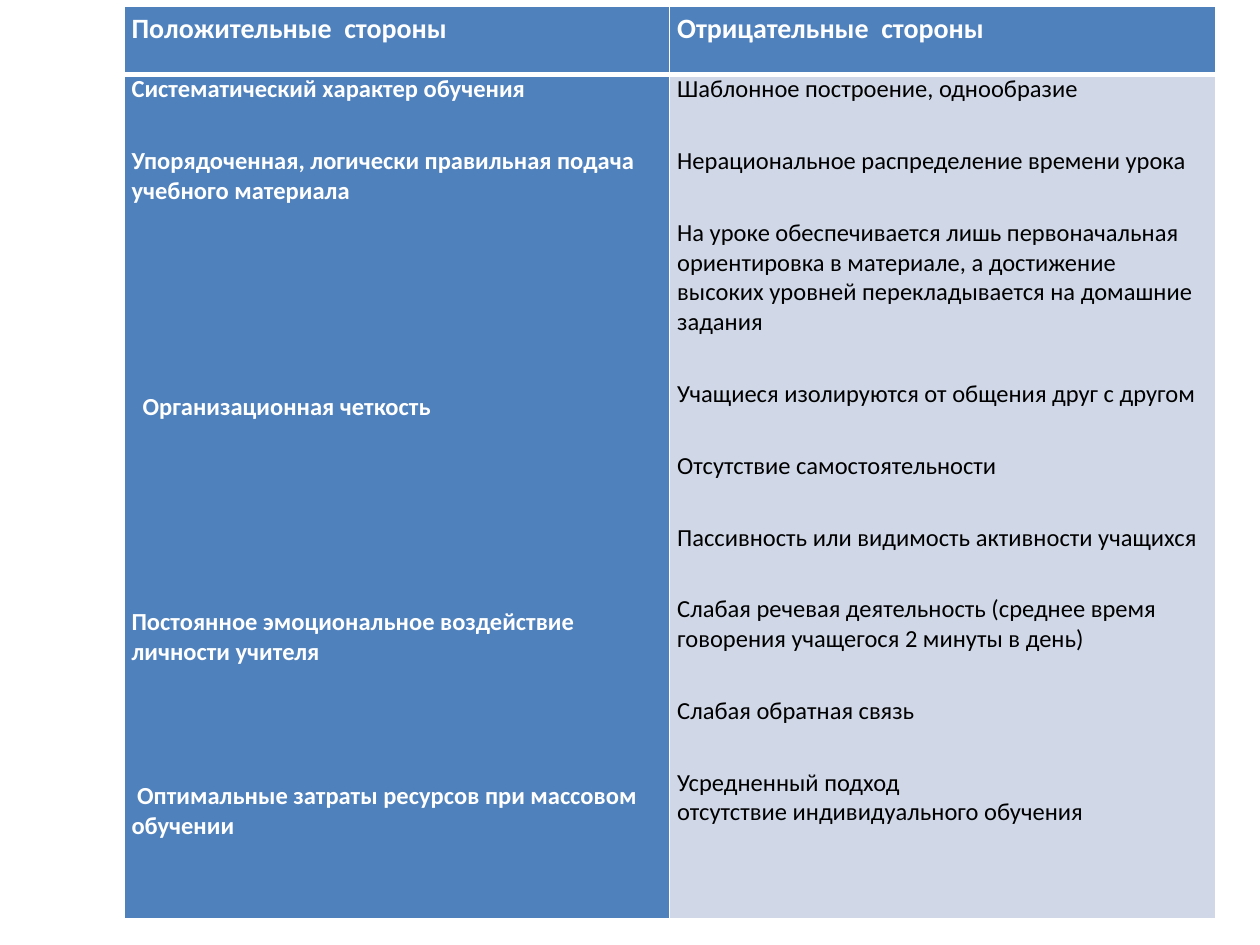
from copy import deepcopy
from dataclasses import dataclass

from lxml.etree import SubElement
from pptx import Presentation
from pptx.dml.color import RGBColor as Rgb
from pptx.enum.text import MSO_ANCHOR as Anchor
from pptx.oxml.ns import qn
from pptx.util import Pt


@dataclass(frozen=True)
class Theme:
    font: str = "Calibri"
    accent: str = "4F81BD"
    pale: str = "D0D8E8"
    light: str = "FFFFFF"
    dark: str = "000000"
    header_size: float = 16
    body_size: float = 14
    thin: float = 1
    thick: float = 3
    inset: float = 4.3
    gap: float = 12


THEME = Theme()
HEADERS = ("Положительные  стороны", "Отрицательные  стороны")

# Each advantage: text, space before, first-line indent
ADVANTAGES = (
    ("Систематический характер обучения", THEME.gap, 0),
    ("Упорядоченная, логически правильная подача учебного материала", THEME.gap, 0),
    ("Организационная четкость", 94.3, 6.3),
    ("Постоянное эмоциональное воздействие личности учителя", 94.3, 0),
    ("Оптимальные затраты ресурсов при массовом обучении", 53.1, 3.2),
)
DRAWBACKS = (
    "Шаблонное построение, однообразие",
    "Нерациональное распределение времени урока",
    "На уроке обеспечивается лишь первоначальная ориентировка в материале, "
    "а достижение высоких уровней перекладывается на домашние задания",
    "Учащиеся изолируются от общения друг с другом",
    "Отсутствие самостоятельности",
    "Пассивность или видимость активности учащихся",
    "Слабая речевая деятельность (среднее время говорения учащегося 2 минуты в день)",
    "Слабая обратная связь",
    "Усредненный подход\nотсутствие индивидуального обучения",
)


def write(paragraph, text, *, size=THEME.body_size, color=THEME.light, bold=True,
          before=THEME.gap, after=THEME.gap, indent=0, line=None):
    paragraph.text = text
    paragraph.space_before, paragraph.space_after = Pt(before), Pt(after)
    if line:
        paragraph.line_spacing = line
    if indent:
        properties = paragraph._p.get_or_add_pPr()
        properties.set("marL", "0")
        properties.set("indent", str(Pt(indent)))
    for run in paragraph.runs:
        run.font.name, run.font.size, run.font.bold = THEME.font, Pt(size), bold
        run.font.color.rgb = Rgb.from_string(color)
    # A line break takes the format of its text
    for line_break in paragraph._p.findall(qn("a:br")):
        line_break.append(deepcopy(paragraph.runs[0]._r.rPr))


def style_cell(cell, fill, top, bottom):
    cell.margin_left = cell.margin_right = Pt(THEME.inset)
    cell.margin_top = cell.margin_bottom = 0
    cell.vertical_anchor = Anchor.TOP
    edges = {"lnL": THEME.thin, "lnR": THEME.thin, "lnT": top, "lnB": bottom}
    for edge, width in edges.items():
        border = SubElement(cell._tc.get_or_add_tcPr(), qn(f"a:{edge}"), w=str(Pt(width)))
        solid = SubElement(border, qn("a:solidFill"))
        SubElement(solid, qn("a:srgbClr"), val=THEME.light)
    cell.fill.solid()
    cell.fill.fore_color.rgb = Rgb.from_string(fill)


def fill_cell(cell, entries):
    frame = cell.text_frame
    for number, (text, options) in enumerate(entries):
        write(frame.add_paragraph() if number else frame.paragraphs[0], text, **options)


def add_comparison(slide, left, top, width, height, header_height):
    table = slide.shapes.add_table(2, 2, Pt(left), Pt(top), Pt(width), Pt(height)).table
    table.horz_banding = False
    for column in table.columns:
        column.width = Pt(width / 2)
    table.rows[0].height = Pt(header_height)
    table.rows[1].height = Pt(height - header_height)

    # Header row
    for column, title in enumerate(HEADERS):
        cell = table.cell(0, column)
        style_cell(cell, THEME.accent, THEME.thin, THEME.thick)
        write(cell.text_frame.paragraphs[0], title, size=THEME.header_size,
              before=0, after=0, line=1.15)

    # Advantages and drawbacks
    advantages = [(text, {"before": before, "indent": indent})
                  for text, before, indent in ADVANTAGES]
    drawbacks = [(text, {"color": THEME.dark, "bold": False}) for text in DRAWBACKS]
    columns = ((THEME.accent, advantages), (THEME.pale, drawbacks))
    for column, (fill, entries) in enumerate(columns):
        cell = table.cell(1, column)
        style_cell(cell, fill, THEME.thick, THEME.thin)
        fill_cell(cell, entries)


def main():
    deck = Presentation()
    deck.slide_width, deck.slide_height = Pt(720), Pt(540)
    slide = deck.slides.add_slide(deck.slide_layouts[6])
    add_comparison(slide, left=70.9, top=3.6, width=623.6, height=521.3, header_height=38.9)
    deck.save("out.pptx")


if __name__ == "__main__":
    main()
